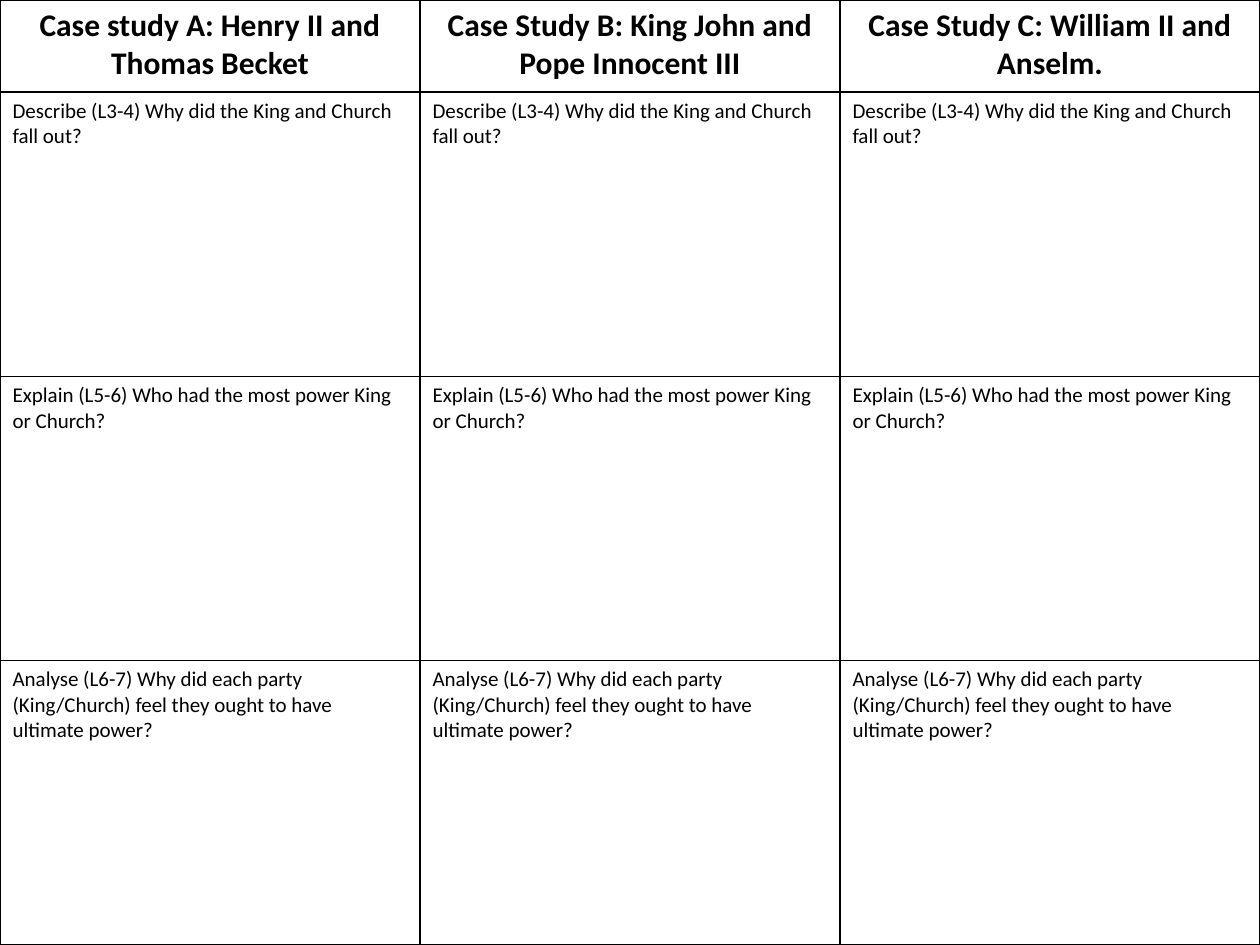
from lxml import etree
from pptx import Presentation
from pptx import util as u
from pptx.dml.color import RGBColor
from pptx.enum import text
from pptx.oxml.ns import qn

BLACK = RGBColor(0, 0, 0)
TITLES = [
    "Case study A: Henry II and Thomas Becket",
    "Case Study B: King John and Pope Innocent III",
    "Case Study C: William II and Anselm.",
]
QUESTIONS = [
    "Describe (L3-4) Why did the King and Church fall out?",
    "Explain (L5-6) Who had the most power King or Church?",
    "Analyse (L6-7) Why did each party (King/Church) feel they ought to have ultimate power?",
]


def add_borders(cell):
    tcPr = cell._tc.get_or_add_tcPr()
    for side in ("a:lnL", "a:lnR", "a:lnT", "a:lnB"):
        ln = etree.SubElement(tcPr, qn(side), w=str(u.Pt(1)))
        fill = etree.SubElement(ln, qn("a:solidFill"))
        etree.SubElement(fill, qn("a:srgbClr"), val=str(BLACK))


prs = Presentation()
prs.slide_width, prs.slide_height = u.Inches(10), u.Inches(7.5)
s = prs.slides.add_slide(prs.slide_layouts[6])

rows = [TITLES] + [[q] * len(TITLES) for q in QUESTIONS]
table = s.shapes.add_table(
    len(rows), len(TITLES), 0, 0, prs.slide_width, prs.slide_height
).table
table.first_row = table.horz_banding = False

for column in table.columns:
    column.width = prs.slide_width // len(TITLES)
header_height = u.Inches(0.73)
table.rows[0].height = header_height
for i in range(1, len(rows)):
    table.rows[i].height = (prs.slide_height - header_height) // len(QUESTIONS)

for i, row in enumerate(rows):
    for j, wording in enumerate(row):
        cell = table.cell(i, j)
        add_borders(cell)
        cell.fill.background()
        cell.text = wording
        p = cell.text_frame.paragraphs[0]
        p.alignment = text.PP_ALIGN.CENTER if i == 0 else text.PP_ALIGN.LEFT
        p.font.name = "Calibri"
        p.font.size = u.Pt(18 if i == 0 else 12)
        p.font.bold = i == 0
        p.font.color.rgb = BLACK

prs.save("out.pptx")
